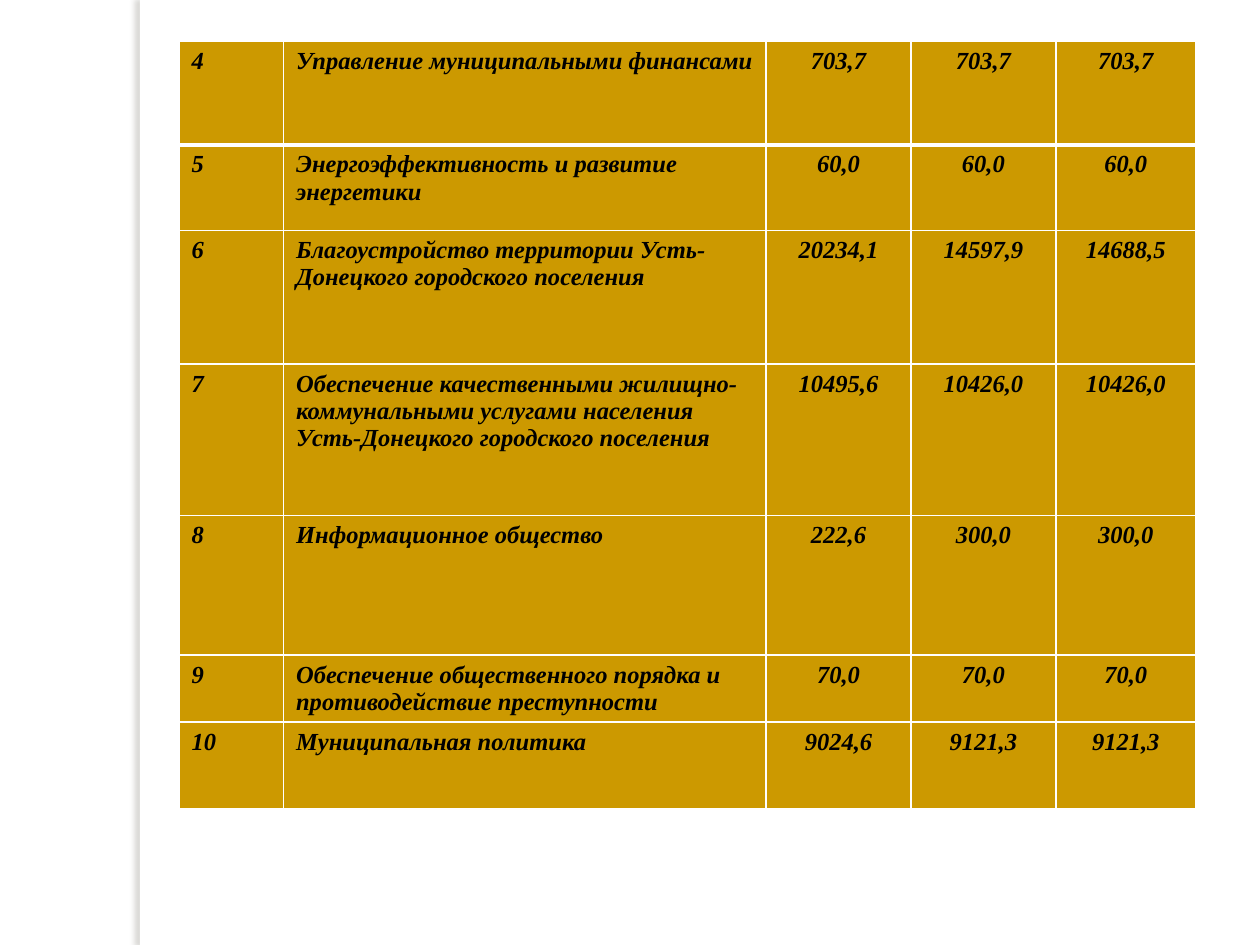
from lxml.etree import SubElement
from pptx import Presentation
from pptx.dml.color import RGBColor
from pptx.enum.shapes import MSO_SHAPE
from pptx.enum.text import PP_ALIGN
from pptx.oxml import parse_xml
from pptx.oxml.ns import nsdecls, qn
from pptx.util import Inches, Pt

COLORS = {"white": "FFFFFF", "gold": "CC9900", "text": "000000", "shadow": "736F63"}
FONT = "Times New Roman"

COLUMN_WIDTHS = [0.83, 3.83, 1.15, 1.15, 1.11]
PROGRAMMES = [  # row height, then number, programme and three yearly sums
    (0.82, "4", "Управление муниципальными финансами", "703,7", "703,7", "703,7"),
    (0.68, "5", "Энергоэффективность и развитие энергетики", "60,0", "60,0", "60,0"),
    (1.06, "6", "Благоустройство территории Усть-Донецкого городского поселения",
     "20234,1", "14597,9", "14688,5"),
    (1.2, "7", "Обеспечение качественными жилищно-коммунальными услугами населения "
     "Усть-Донецкого городского поселения", "10495,6", "10426,0", "10426,0"),
    (1.11, "8", "Информационное общество", "222,6", "300,0", "300,0"),
    (0.52, "9", "Обеспечение общественного порядка и противодействие преступности",
     "70,0", "70,0", "70,0"),
    (0.69, "10", "Муниципальная политика", "9024,6", "9121,3", "9121,3"),
]


def set_borders(cell, widths):
    """Draw white cell borders; widths maps a side tag to points."""
    properties = cell._tc.get_or_add_tcPr()
    for position, (side, width) in enumerate(widths.items()):
        properties.insert(position, parse_xml(
            f'<a:{side} {nsdecls("a")} w="{Pt(width)}"><a:solidFill>'
            f'<a:srgbClr val="{COLORS["white"]}"/></a:solidFill></a:{side}>'))


deck = Presentation()
deck.slide_width, deck.slide_height = Inches(10), Inches(7.5)
page = deck.slides.add_slide(deck.slide_layouts[6])
page.background.fill.solid()
page.background.fill.fore_color.rgb = RGBColor.from_string(COLORS["white"])

# Vertical strip casting a soft shadow to the left
strip = page.shapes.add_shape(
    MSO_SHAPE.RECTANGLE, Inches(1.11), Inches(0), Inches(0.08), Inches(7.5))
strip.fill.solid()
strip.fill.fore_color.rgb = RGBColor.from_string(COLORS["white"])
strip.line.fill.background()
strip._element.spPr.append(parse_xml(
    f'<a:effectLst {nsdecls("a")}><a:outerShdw blurRad="{Pt(3)}" dist="{Pt(3)}" '
    f'dir="10800000" algn="tl" rotWithShape="0"><a:srgbClr val="{COLORS["shadow"]}">'
    '<a:alpha val="25000"/></a:srgbClr></a:outerShdw></a:effectLst>'))

# Budget table
table = page.shapes.add_table(
    len(PROGRAMMES), len(COLUMN_WIDTHS), Inches(1.42), Inches(0.33),
    Inches(8.08), Inches(6.12)).table
for column, width in zip(table.columns, COLUMN_WIDTHS):
    column.width = Inches(width)

for row_index, (height, *texts) in enumerate(PROGRAMMES):
    table.rows[row_index].height = Inches(height)
    for column_index, text in enumerate(texts):
        cell = table.cell(row_index, column_index)
        cell.fill.solid()
        cell.fill.fore_color.rgb = RGBColor.from_string(COLORS["gold"])
        # The first row is set off by a thicker rule
        set_borders(cell, {"lnL": 1, "lnR": 1, "lnT": 3 if row_index == 1 else 1,
                           "lnB": 3 if row_index == 0 else 1})
        para = cell.text_frame.paragraphs[0]
        para.text = text
        para.alignment = PP_ALIGN.CENTER if column_index > 1 else PP_ALIGN.LEFT
        spacing = SubElement(para._p.get_or_add_pPr(), qn("a:spcBef"))
        SubElement(spacing, qn("a:spcPct")).set("val", "20000")
        font = para.runs[0].font
        font.name, font.size = FONT, Pt(14)
        font.bold = font.italic = True
        font.color.rgb = RGBColor.from_string(COLORS["text"])

deck.save("out.pptx")
